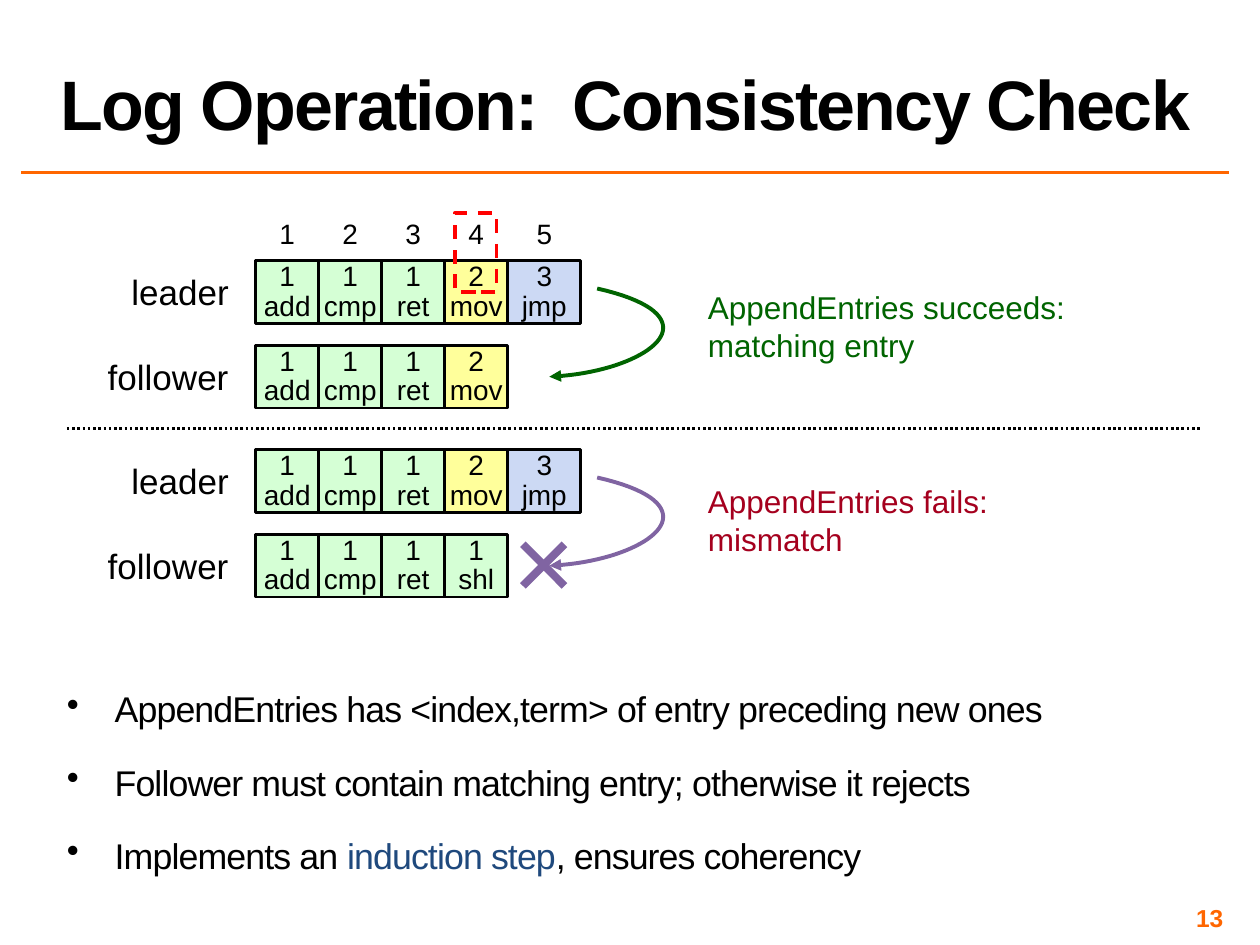
from dataclasses import dataclass

from lxml import etree
from pptx import Presentation
from pptx.dml.color import RGBColor
from pptx.enum.dml import MSO_LINE
from pptx.enum.shapes import MSO_CONNECTOR, MSO_SHAPE
from pptx.enum.text import MSO_ANCHOR, MSO_AUTO_SIZE, PP_ALIGN
from pptx.oxml.ns import qn
from pptx.util import Inches, Pt

RECT = MSO_SHAPE.RECTANGLE
STRAIGHT = MSO_CONNECTOR.STRAIGHT
DASH, DOTS = MSO_LINE.DASH, MSO_LINE.ROUND_DOT
LEFT, CENTER, RIGHT = PP_ALIGN.LEFT, PP_ALIGN.CENTER, PP_ALIGN.RIGHT
TOP, MIDDLE, BOTTOM = MSO_ANCHOR.TOP, MSO_ANCHOR.MIDDLE, MSO_ANCHOR.BOTTOM


@dataclass(frozen=True)
class Theme:
    font: str = "Arial"
    ink: str = "000000"
    accent: str = "FF6600"
    green: str = "006400"
    purple: str = "8064A2"
    crimson: str = "A5001E"
    red: str = "FF0000"
    blue: str = "1F497D"
    terms: tuple = ("D5FFD5", "FFFF9B", "CCD9F4")
    title: float = 40
    body: float = 20.4
    label: float = 20
    note: float = 18
    cell: float = 16
    page: float = 14


THEME = Theme()
LOG_X, CELL, LAST = 2.03, 0.5, 0.58
ROW_GAP = 0.67
LOG = ((1, "add"), (1, "cmp"), (1, "ret"), (2, "mov"), (3, "jmp"))
BAD_LOG = LOG[:3] + ((1, "shl"),)


def write(shape, paras, size, color=THEME.ink, bold=False, align=LEFT,
          anchor=TOP, inset=(0.1, 0.05), wrap=True, lead=None, before=0,
          track=0, bullet=False):
    """Fill a shape with paragraphs; each is a string or a list of (text, colour)."""
    frame = shape.text_frame
    frame.auto_size = MSO_AUTO_SIZE.NONE
    frame.word_wrap = wrap
    frame.vertical_anchor = anchor
    frame.margin_left = frame.margin_right = Inches(inset[0])
    frame.margin_top = frame.margin_bottom = Inches(inset[1])
    for i, runs in enumerate(paras):
        para = frame.add_paragraph() if i else frame.paragraphs[0]
        para.alignment = align
        para.space_before = Pt(before)
        if lead:
            para.line_spacing = lead
        if bullet:
            props = para._p.get_or_add_pPr()
            props.set("marL", str(Inches(0.38)))
            props.set("indent", str(-Inches(0.38)))
            etree.SubElement(props, qn("a:buChar")).set("char", "•")
        for text, tint in [(runs, color)] if isinstance(runs, str) else runs:
            for j, line in enumerate(text.split("\n")):
                if j:
                    para.add_line_break()
                run = para.add_run()
                run.text = line
                font = run.font
                font.name, font.size, font.bold = THEME.font, Pt(size), bold
                font.color.rgb = RGBColor.from_string(tint)
                if track:
                    run._r.get_or_add_rPr().set("spc", str(int(track * 100)))


def add_text(slide, box, paras, size, **style):
    shape = slide.shapes.add_textbox(*map(Inches, box))
    write(shape, paras, size, **style)


def set_line(shape, color, width, dash=None):
    shape.line.color.rgb = RGBColor.from_string(color)
    shape.line.width = Pt(width)
    if dash:
        shape.line.dash_style = dash


def add_rect(slide, box, fill, color, width, dash=None):
    rect = slide.shapes.add_shape(RECT, *map(Inches, box))
    rect.shadow.inherit = False
    if fill:
        rect.fill.solid()
        rect.fill.fore_color.rgb = RGBColor.from_string(fill)
    else:
        rect.fill.background()
    set_line(rect, color, width, dash)
    return rect


def add_line(slide, ends, color, width, dash=None):
    line = slide.shapes.add_connector(STRAIGHT, *map(Inches, ends))
    etree.SubElement(line._element.spPr, qn("a:effectLst"))
    set_line(line, color, width, dash)


def add_curve(slide, top, color):
    """Draw an arrow from the leader's log round to the follower's log."""
    knots = ((4.74, top), (5.75, top + 0.23), (5.12, top + 0.67), (4.36, top + 0.7))
    steps = 40
    dots = []
    for i in range(steps + 1):
        t = i / steps
        u = 1 - t
        mix = (u ** 3, 3 * u * u * t, 3 * u * t * t, t ** 3)
        dots.append(tuple(Inches(sum(m * k[axis] for m, k in zip(mix, knots)))
                          for axis in (0, 1)))
    path = slide.shapes.build_freeform(*dots[0])
    path.add_line_segments(dots[1:], close=False)
    curve = path.convert_to_shape()
    curve.shadow.inherit = False
    curve.fill.background()
    set_line(curve, color, 2.25)
    etree.SubElement(curve.line._get_or_add_ln(), qn("a:tailEnd")).set("type", "triangle")


def span(col):
    """Give the left edge and width of a log column."""
    return LOG_X + col * CELL, LAST if col == len(LOG) - 1 else CELL


def add_log(slide, name, left, top, log):
    add_text(slide, (left, top + 0.08, 1.82 - left, 0.34), [name], THEME.label,
             align=CENTER, inset=(0, 0), wrap=False)
    for col, (term, word) in enumerate(log):
        x, width = span(col)
        cell = add_rect(slide, (x, top, width, CELL), THEME.terms[term - 1],
                        THEME.ink, 1.5)
        write(cell, [f"{term}\n{word}"], THEME.cell, align=CENTER, anchor=MIDDLE,
              inset=(0, 0), lead=Pt(17))


def add_case(slide, top, follow, color):
    add_log(slide, "leader", 1.04, top, LOG)
    add_log(slide, "follower", 0.85, top + ROW_GAP, follow)
    add_curve(slide, top + 0.22, color)


def add_title(slide):
    title = slide.shapes.title
    title.left, title.top, title.width, title.height = map(Inches, (0.38, 0.02, 9.37, 1.17))
    write(title, ["Log Operation:  Consistency Check"], THEME.title, bold=True,
          anchor=BOTTOM, lead=0.8, track=-1)
    add_line(slide, (0.17, 1.37, 9.75, 1.37), THEME.accent, 2)


def add_points(slide):
    add_text(slide, (0.49, 5.38, 9.26, 1.6), [
        "AppendEntries has <index,term> of entry preceding new ones",
        "Follower must contain matching entry; otherwise it rejects",
        [("Implements an ", THEME.ink), ("induction step", THEME.blue),
         (", ensures coherency", THEME.ink)],
    ], THEME.body, inset=(0.04, 0.04), lead=1.1, before=15, track=-0.5, bullet=True)


def main():
    deck = Presentation()
    deck.slide_width, deck.slide_height = Inches(10), Inches(7.5)
    slide = deck.slides.add_slide(deck.slide_layouts[5])
    add_title(slide)
    add_points(slide)
    add_text(slide, (7.42, 7.17, 2.33, 0.23), ["13"], THEME.page, color=THEME.accent,
             bold=True, align=RIGHT, anchor=MIDDLE, inset=(0.04, 0.04))

    for col in range(len(LOG)):
        x, width = span(col)
        add_text(slide, (x, 1.67, width, 0.37), [str(col + 1)], THEME.cell, align=CENTER)
    add_case(slide, 2.07, LOG[:4], THEME.green)
    add_line(slide, (0.53, 3.4, 9.53, 3.4), THEME.ink, 1.5, DOTS)
    add_case(slide, 3.57, BAD_LOG, THEME.purple)

    add_text(slide, (5.52, 2.24, 3.06, 0.71), ["AppendEntries succeeds:", "matching entry"],
             THEME.note, color=THEME.green, wrap=False)
    add_text(slide, (5.52, 3.78, 2.45, 0.71), ["AppendEntries fails:", "mismatch"],
             THEME.note, color=THEME.crimson, wrap=False)
    for start, end in ((4.32, 4.65), (4.65, 4.32)):
        add_line(slide, (4.15, start, 4.48, end), THEME.purple, 4.5)
    add_rect(slide, (3.61, 1.69, 0.33, 0.63), None, THEME.red, 2, DASH)
    deck.save("out.pptx")


if __name__ == "__main__":
    main()
